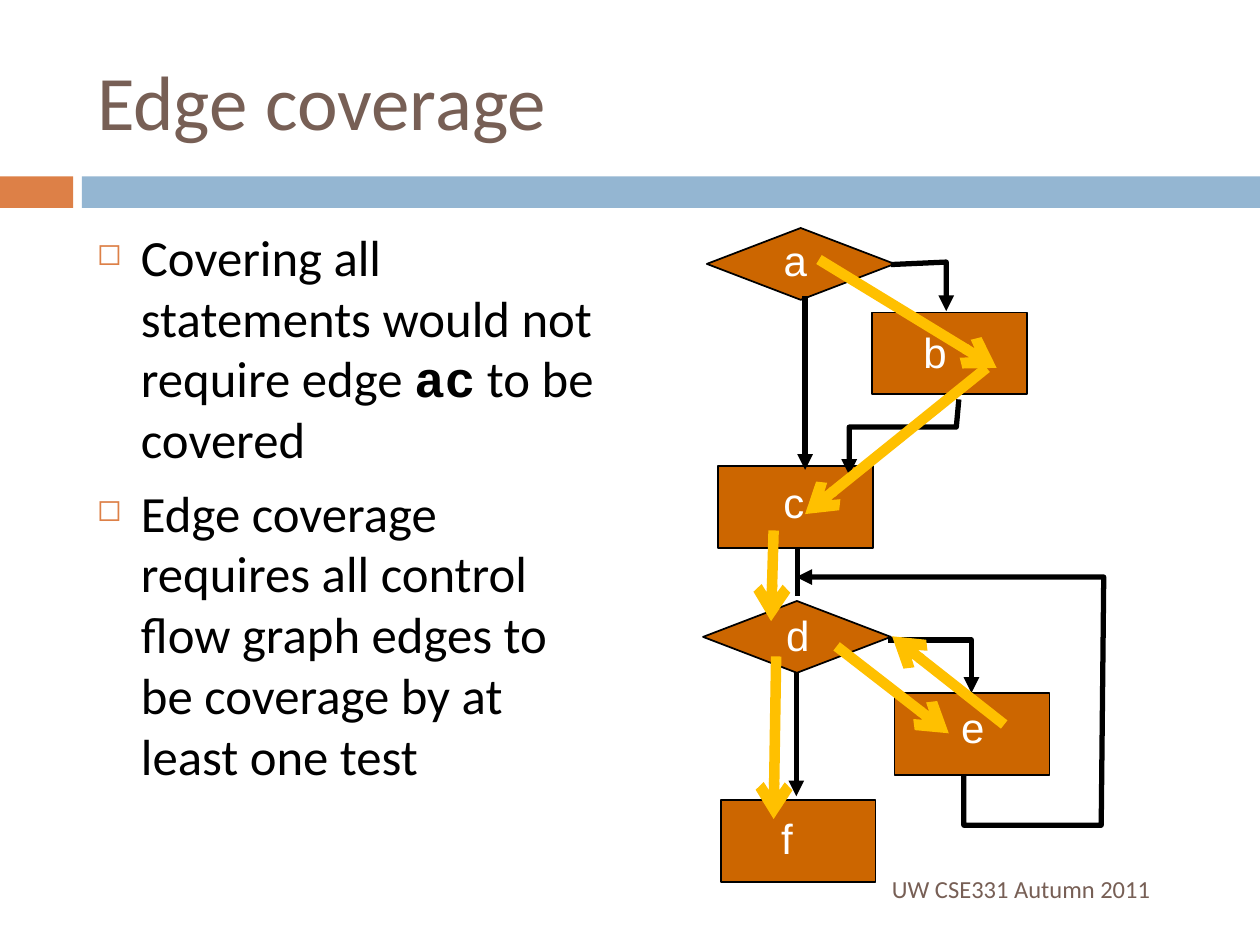
import pptx
import pptx.util
import pptx.dml.color
import pptx.enum.shapes
import pptx.enum.text
import pptx.oxml
import pptx.oxml.ns
import lxml.etree

HUES = {"rust": "CC6600", "gold": "FFC000", "ink": "000000", "white": "FFFFFF",
        "brown": "775F55", "clay": "DD8047", "sky": "94B6D2"}
COLS, ROWS = 100, 75
CELL = pptx.util.Inches(10) // COLS
KIND = pptx.enum.shapes.MSO_SHAPE
MID = pptx.enum.text.MSO_ANCHOR.MIDDLE
TOP = pptx.enum.text.MSO_ANCHOR.TOP
LEFT = pptx.enum.text.PP_ALIGN.LEFT

NODES = [
    ("c", KIND.RECTANGLE, (2, 20), (6.2, 20.3, 3.6)),
    ("e", KIND.RECTANGLE, (16, 38), (20.3, 38.2, 3.8)),
    ("d", KIND.DIAMOND, (0.8, 30.7), (6.4, 30.9, 3.8)),
    ("f", KIND.RECTANGLE, (2.2, 46.5), (6, 47, 2.9)),
    ("a", KIND.DIAMOND, (1.1, 1.1), (6.2, 1.1, 3.8)),
    ("b", KIND.RECTANGLE, (14.2, 7.8), (17.3, 8.4, 3.8)),
]
SIZES = {KIND.RECTANGLE: (12.3, 6.5), KIND.DIAMOND: (14.9, 5.7)}
BENDS = [
    [(21.5, 44.5), (21.5, 48.5), (32.4, 48.5), (32.6, 28.8), (8.2, 28.8)],
    [(15.5, 33.8), (22.1, 33.8), (22.1, 38)],
    [(15.7, 4), (20.1, 3.8), (20.1, 7.7)],
    [(21.1, 14.7), (20.9, 16.9), (12.4, 16.9), (12.4, 20.7)],
]
EDGES = [
    ((8.3, 26.4), (8.3, 30.3), None),
    ((8.2, 36.3), (8.2, 46.2), "triangle"),
    ((8.9, 6.5), (8.9, 20.3), "triangle"),
]
TRAIL = [
    ((10, 3.6), (24.1, 12.2)),
    ((23.3, 12.2), (8.9, 23.8)),
    ((6.4, 25.1), (6.2, 32.3)),
    ((11.4, 34.3), (20.3, 41.2)),
    ((24.7, 40.5), (15.8, 33.5)),
    ((6.6, 35.1), (6.4, 48)),
]


def grid(*nums):
    return [round(n * CELL) for n in nums]


def shift(box, spot):
    return grid(box[0] + spot[0], box[1] + spot[1])


def color(name):
    return pptx.dml.color.RGBColor.from_string(HUES[name])


def write(para, text, size=24, font="Calibri", hue="ink", bold=False):
    run = para.add_run()
    run.text = text
    run.font.size = pptx.util.Pt(size)
    run.font.name = font
    run.font.bold = bold
    run.font.color.rgb = color(hue)
    para.alignment = LEFT


def frame(slide, box, wrap=True, anchor=TOP):
    text = slide.shapes.add_textbox(*grid(*box)).text_frame
    text.word_wrap = wrap
    text.vertical_anchor = anchor
    return text


def block(slide, kind, box, hue, edge=None):
    shape = slide.shapes.add_shape(kind, *grid(*box))
    shape.shadow.inherit = False
    shape.fill.solid()
    shape.fill.fore_color.rgb = color(hue)
    if edge:
        shape.line.color.rgb = color(edge)
        shape.line.width = pptx.util.Pt(1)
    else:
        shape.line.fill.background()


def stroke(shape, hue, width, tip):
    shape.line.color.rgb = color(hue)
    shape.line.width = pptx.util.Pt(width)
    line = shape.line._get_or_add_ln()
    qn = pptx.oxml.ns.qn
    lxml.etree.SubElement(line, qn("a:round"))
    if tip:
        lxml.etree.SubElement(line, qn("a:tailEnd"), type=tip)


def link(shapes, box, start, end, hue, width, tip):
    kind = pptx.enum.shapes.MSO_CONNECTOR.STRAIGHT
    line = shapes.add_connector(kind, *shift(box, start), *shift(box, end))
    stroke(line, hue, width, tip)
    lxml.etree.SubElement(line._element.spPr, pptx.oxml.ns.qn("a:effectLst"))


def bend(slide, box, spots):
    first, *rest = [shift(box, spot) for spot in spots]
    pen = slide.shapes.build_freeform(*first)
    pen.add_line_segments(rest, close=False)
    shape = pen.convert_to_shape()
    shape.fill.background()
    stroke(shape, "ink", 3, "triangle")
    shape.shadow.inherit = False


def bullet(para):
    props = para._p.get_or_add_pPr()
    props.set("marL", str(round(3.5 * CELL)))
    props.set("indent", str(round(-3.5 * CELL)))
    para.space_before = pptx.util.Pt(7)
    space = pptx.oxml.ns.nsdecls("a")
    for part in (f'<a:buClr {space}><a:srgbClr val="{HUES["clay"]}"/></a:buClr>',
                 f'<a:buSzPct {space} val="60000"/>',
                 f'<a:buChar {space} char="◻"/>'):
        props.append(pptx.oxml.parse_xml(part))


def head(slide, box):
    title = slide.shapes.title
    title.left, title.top, title.width, title.height = grid(*box)
    title.text_frame.vertical_anchor = MID
    write(title.text_frame.paragraphs[0], "Edge coverage", size=44, hue="brown")


def band(slide, box):
    left, top, width, height = box
    block(slide, KIND.RECTANGLE, (left, top, 5.8, height), "clay")
    block(slide, KIND.RECTANGLE, (left + 6.5, top, width - 6.5, height), "sky")


def points(slide, box):
    text = frame(slide, box)
    first, second = text.paragraphs[0], text.add_paragraph()
    write(first, "Covering all statements would not require edge ", size=29)
    write(first, "ac", size=29, font="Courier New", bold=True)
    write(first, " to be covered", size=29)
    write(second, "Edge coverage requires all control flow graph edges to be "
          "coverage by at least one test", size=29)
    for para in (first, second):
        bullet(para)


def flow(slide, box):
    left, top = box[:2]
    for _, kind, (x, y), _ in NODES:
        block(slide, kind, (left + x, top + y, *SIZES[kind]), "rust", edge="ink")
    for spots in BENDS:
        bend(slide, box, spots)
    for start, end, tip in EDGES:
        link(slide.shapes, box, start, end, "ink", 3, tip)
    for name, _, _, (x, y, width) in NODES:
        text = frame(slide, (left + x, top + y, width, 5), wrap=False)
        write(text.paragraphs[0], name, font="Arial", hue="white")


def trail(slide, box):
    group = slide.shapes.add_group_shape()
    for start, end in TRAIL:
        link(group.shapes, box, start, end, "gold", 6, "arrow")


def foot(slide, box):
    text = frame(slide, box, anchor=MID)
    write(text.paragraphs[0], "UW CSE331 Autumn 2011", size=14, hue="brown")


def main():
    deck = pptx.Presentation()
    deck.slide_width, deck.slide_height = grid(COLS, ROWS)
    slide = deck.slides.add_slide(deck.slide_layouts[5])
    chart = (55, 17, 35, 53)
    band(slide, (0, 14, COLS, 2.5))
    head(slide, (6.7, 2.5, 89.2, 10.8))
    points(slide, (6.7, 17.4, 42.5, 50))
    flow(slide, chart)
    foot(slide, (69.8, 68.5, 29.2, 4))
    trail(slide, chart)
    deck.save("out.pptx")


if __name__ == "__main__":
    main()
